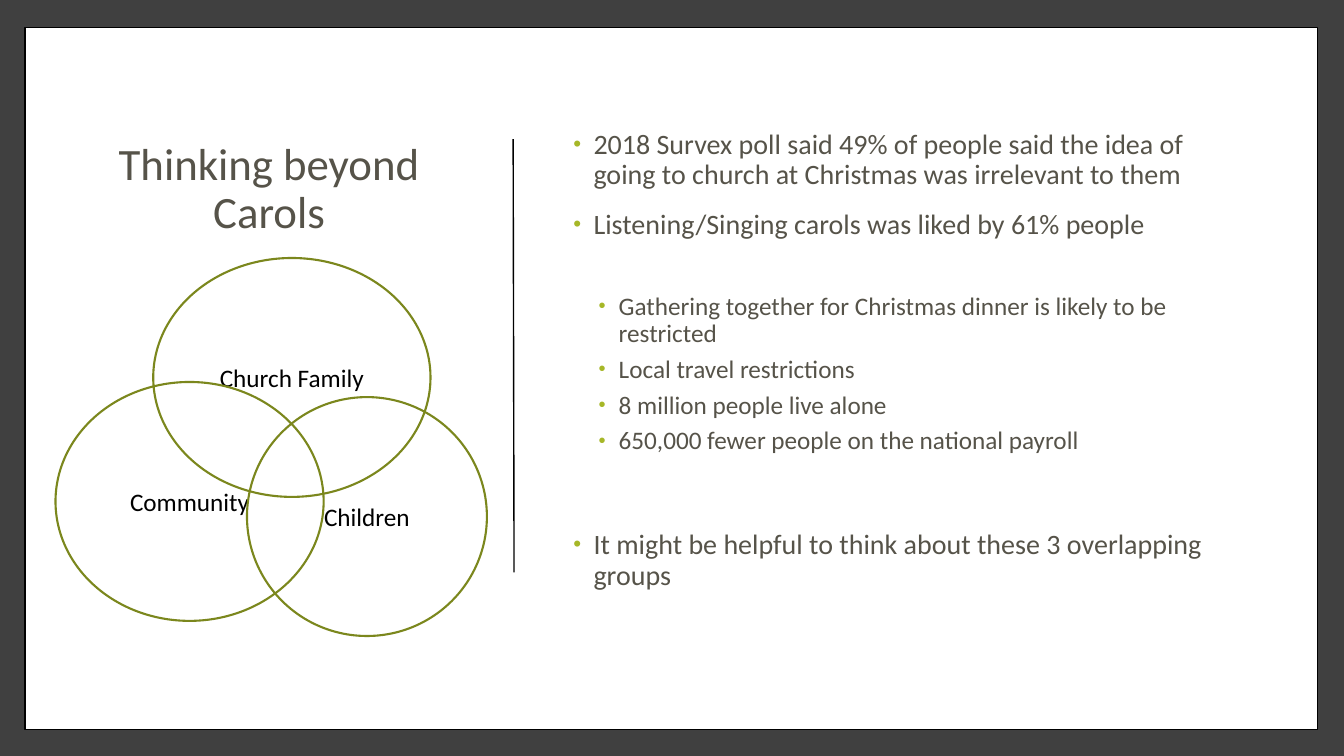
from lxml.etree import SubElement
from pptx import Presentation
from pptx.dml.color import RGBColor
from pptx.enum.shapes import MSO_CONNECTOR as Connector, MSO_SHAPE as Shape
from pptx.enum.text import MSO_ANCHOR as Anchor, PP_ALIGN as Align
from pptx.oxml.ns import qn
from pptx.util import Inches, Pt

DARK = RGBColor(0x40, 0x40, 0x40)
WHITE = RGBColor(0xFF, 0xFF, 0xFF)
BLACK = RGBColor(0x00, 0x00, 0x00)
TEXT = RGBColor(0x56, 0x53, 0x49)
LIME = RGBColor(0xA6, 0xB7, 0x27)
OLIVE = RGBColor(0x7B, 0x87, 0x1D)
FONT = "Calibri"

deck = Presentation()
deck.slide_width, deck.slide_height = Inches(13.33), Inches(7.5)
page = deck.slides.add_slide(deck.slide_layouts[5])


def place(left, top, width, height):
    """Turn percentages of the slide's width and height into lengths."""
    across, down = deck.slide_width / 100, deck.slide_height / 100
    return int(left * across), int(top * down), int(width * across), int(height * down)


def style(paragraph, size, color):
    paragraph.font.name = FONT
    paragraph.font.size = Pt(size)
    paragraph.font.color.rgb = color


# Dark border around a white page
border = page.shapes.add_shape(Shape.RECTANGLE, *place(0, 0, 100, 100))
border.line.fill.background()
panel = page.shapes.add_shape(Shape.RECTANGLE, *place(1.87, 3.6, 96.15, 92.93))
panel.line.color.rgb = BLACK
panel.line.width = Pt(1)
for sheet, color in ((border, DARK), (panel, WHITE)):
    sheet.shadow.inherit = False
    sheet.fill.solid()
    sheet.fill.fore_color.rgb = color

# Title, brought in front of the panel
title = page.shapes.title
panel._element.addnext(title._element)
title.left, title.top, title.width, title.height = place(5.25, 9.33, 29.55, 31.6)
title.text_frame.text = "Thinking beyond Carols"
title.text_frame.vertical_anchor = Anchor.MIDDLE
heading = title.text_frame.paragraphs[0]
heading.alignment = Align.CENTER
heading.line_spacing = 0.9
style(heading, 32, TEXT)

divider = page.shapes.add_connector(Connector.STRAIGHT, *place(38.18, 18.4, 38.25, 75.73))
divider.line.color.rgb = BLACK
divider.line.width = Pt(1)
SubElement(divider._element.spPr, qn("a:effectLst"))

# Bullets: level, space before, wording
BULLETS = [
    (0, 14, "2018 Survex poll said 49% of people said the idea of going to church "
            "at Christmas was irrelevant to them"),
    (0, 14, "Listening/Singing carols was liked by 61% people"),
    (1, 38, "Gathering together for Christmas dinner is likely to be restricted"),
    (1, 2, "Local travel restrictions"),
    (1, 2, "8 million people live alone"),
    (1, 2, "650,000 fewer people on the national payroll"),
    (0, 50, "It might be helpful to think about these 3 overlapping groups"),
]
body = page.shapes.add_textbox(*place(41.55, 9.33, 50.63, 76.8)).text_frame
body.word_wrap = True
body.vertical_anchor = Anchor.MIDDLE
for index, (level, before, wording) in enumerate(BULLETS):
    para = body.add_paragraph() if index else body.paragraphs[0]
    para.text = wording
    para.level = level
    para.line_spacing = 0.9
    para.space_before = Pt(before)
    para.space_after = Pt(4 * level)
    style(para, 20 - 2 * level, TEXT)
    settings = para._p.get_or_add_pPr()
    settings.set("marL", str(Inches(0.25 * (level + 1))))
    settings.set("indent", str(Inches(-0.2)))
    marks = [("buClr", None), ("buSzPct", ("val", "80000")),
             ("buFont", ("typeface", "Arial")), ("buChar", ("char", "•"))]
    # Bullet marks belong before the default run properties
    defaults = settings.find(qn("a:defRPr"))
    for tag, attribute in marks:
        mark = SubElement(settings, qn("a:" + tag))
        if attribute:
            mark.set(*attribute)
        else:
            SubElement(mark, qn("a:srgbClr")).set("val", str(LIME))
    settings.append(defaults)

# Three overlapping groups
GROUPS = [
    ("Church Family", 11.4, 34.13, 20.63),
    ("Community", 4.13, 50.53, 19.95),
    ("Children", 18.38, 52.53, 17.85),
]
for name, left, top, width in GROUPS:
    group = page.shapes.add_shape(Shape.OVAL, *place(left, top, width, 31.6))
    group.shadow.inherit = False
    group.fill.background()
    group.line.color.rgb = OLIVE
    group.line.width = Pt(1.5)
    group.text_frame.text = name
    group.text_frame.vertical_anchor = Anchor.MIDDLE
    label = group.text_frame.paragraphs[0]
    label.alignment = Align.CENTER
    style(label, 18, BLACK)

deck.save("out.pptx")
